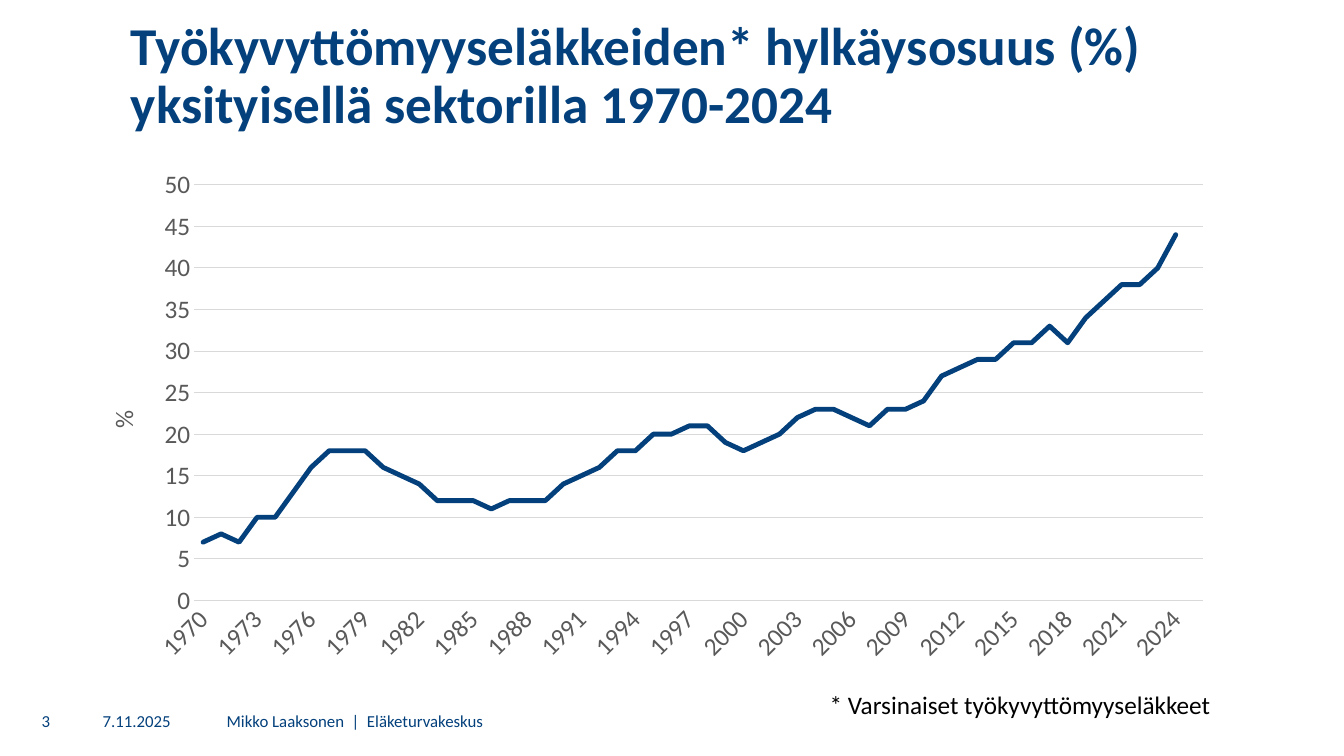
from pptx import Presentation
from pptx.chart.data import CategoryChartData
from pptx.dml.color import RGBColor
from pptx.enum.chart import XL_CHART_TYPE, XL_MARKER_STYLE, XL_TICK_MARK
from pptx.enum.text import MSO_ANCHOR, PP_ALIGN
from pptx.oxml import parse_xml
from pptx.oxml.ns import nsdecls, qn
from pptx.util import Inches, Pt

THEME = {
    "face": "Calibri",
    "navy": RGBColor.from_string("03407C"),
    "black": RGBColor.from_string("000000"),
    "gray": RGBColor.from_string("595959"),
    "pale": RGBColor.from_string("D9D9D9"),
    "title": Pt(38), "body": Pt(18), "foot": Pt(12),
    "thick": Pt(3.5), "thin": Pt(0.75),
}

FOOT = {"size": "foot", "color": "navy", "frame": {"vertical_anchor": MSO_ANCHOR.MIDDLE},
        "para": {"space_after": Pt(6)}}
TEXTS = [
    ("Työkyvyttömyyseläkkeiden* hylkäysosuus (%) yksityisellä sektorilla 1970-2024",
     (12, 1.5, 115, 12.4),
     {"size": "title", "color": "navy", "bold": True, "para": {"line_spacing": 0.9}}),
    ("3", (2, 69.5, 5.1, 4),
     FOOT | {"frame": FOOT["frame"] | {"margin_left": 0, "margin_right": 0},
             "para": FOOT["para"] | {"alignment": PP_ALIGN.CENTER}}),
    ("7.11.2025", (9.2, 69.5, 11.3, 4), FOOT),
    ("Mikko Laaksonen  |  Eläketurvakeskus", (21.5, 69.5, 102.6, 4), FOOT),
    ("* Varsinaiset työkyvyttömyyseläkkeet", (81.3, 67.9, 44, 4),
     {"size": "body", "color": "black"}),
]

START = 1970
RATES = [
    7, 8, 7, 10, 10, 13, 16, 18, 18, 18,
    16, 15, 14, 12, 12, 12, 11, 12, 12, 12,
    14, 15, 16, 18, 18, 20, 20, 21, 21, 19,
    18, 19, 20, 22, 23, 23, 22, 21, 23, 23,
    24, 27, 28, 29, 29, 31, 31, 33, 31, 34,
    36, 38, 38, 40, 44, None,
]
CHART = (6.6, 15.8, 115, 50.9)
PLOT = {"x": 0.11, "y": 0.05, "w": 0.87, "h": 0.81}
LABEL = {"x": 0.03, "y": 0.48}

deck = Presentation()
deck.slide_width, deck.slide_height = Inches(13.33), Inches(7.5)
COL, ROW = deck.slide_width / 133.3, deck.slide_height / 75
slide = deck.slides.add_slide(deck.slide_layouts[6])


def apply(item, values):
    for key, value in values.items():
        setattr(item, key, value)


def area(box):
    return [round(n * unit) for n, unit in zip(box, (COL, ROW, COL, ROW))]


def style(font, size, color, bold=False):
    apply(font, {"name": THEME["face"], "size": THEME[size], "bold": bold})
    font.color.rgb = THEME[color]


def stroke(line, color, width):
    line.color.rgb = THEME[color]
    line.width = THEME[width]


def write(text, box, form):
    frame = slide.shapes.add_textbox(*area(box)).text_frame
    apply(frame, {"word_wrap": True} | form.get("frame", {}))
    para = frame.paragraphs[0]
    apply(para, form.get("para", {}))
    run = para.add_run()
    run.text = text
    style(run.font, form["size"], form["color"], form.get("bold", False))


def place(node, spot, index, inner=False):
    for old in node.findall(qn("c:layout")):
        node.remove(old)
    tags = '<c:layoutTarget val="inner"/>' if inner else ""
    tags += "".join(f'<c:{key}Mode val="edge"/>' for key in "xy")
    tags += "".join(f'<c:{key} val="{value}"/>' for key, value in spot.items())
    node.insert(index, parse_xml(
        f'<c:layout {nsdecls("c")}><c:manualLayout>{tags}</c:manualLayout></c:layout>'))


def turn(node, angle):
    body = node.find(".//" + qn("a:bodyPr"))
    body.set("rot", str(angle * 60000))
    body.set("vert", "horz")


def draw():
    data = CategoryChartData()
    data.categories = [str(START + n) for n in range(len(RATES))]
    data.add_series("Hylkäysosuus", RATES)
    chart = slide.shapes.add_chart(XL_CHART_TYPE.LINE, *area(CHART), data).chart
    apply(chart, {"has_legend": False, "has_title": False})
    style(chart.font, "body", "black")
    plot = chart.plots[0]
    plot.vary_by_categories = False
    series = plot.series[0]
    series.smooth = False
    series.marker.style = XL_MARKER_STYLE.NONE
    stroke(series.format.line, "navy", "thick")
    series.format.line._get_or_add_ln().set("cap", "rnd")

    years, rates = chart.category_axis, chart.value_axis
    for axis in (years, rates):
        apply(axis, {"major_tick_mark": XL_TICK_MARK.NONE,
                     "minor_tick_mark": XL_TICK_MARK.NONE})
        style(axis.tick_labels.font, "body", "gray")
    stroke(years.format.line, "pale", "thin")
    turn(years._element.find(qn("c:txPr")), -45)
    skip = parse_xml(f'<c:tickLblSkip {nsdecls("c")} val="3"/>')
    years._element.find(qn("c:noMultiLvlLbl")).addprevious(skip)

    apply(rates, {"minimum_scale": 0, "maximum_scale": 50, "major_unit": 5,
                  "has_major_gridlines": True})
    rates.format.line.fill.background()
    stroke(rates.major_gridlines.format.line, "pale", "thin")
    title = rates.axis_title
    title.text_frame.text = "%"
    style(title.text_frame.paragraphs[0].runs[0].font, "body", "gray")
    turn(title._element, -90)
    place(title._element, LABEL, 1)
    place(chart._chartSpace.chart.plotArea, PLOT, 0, True)


draw()
for entry in TEXTS:
    write(*entry)
deck.save("out.pptx")
